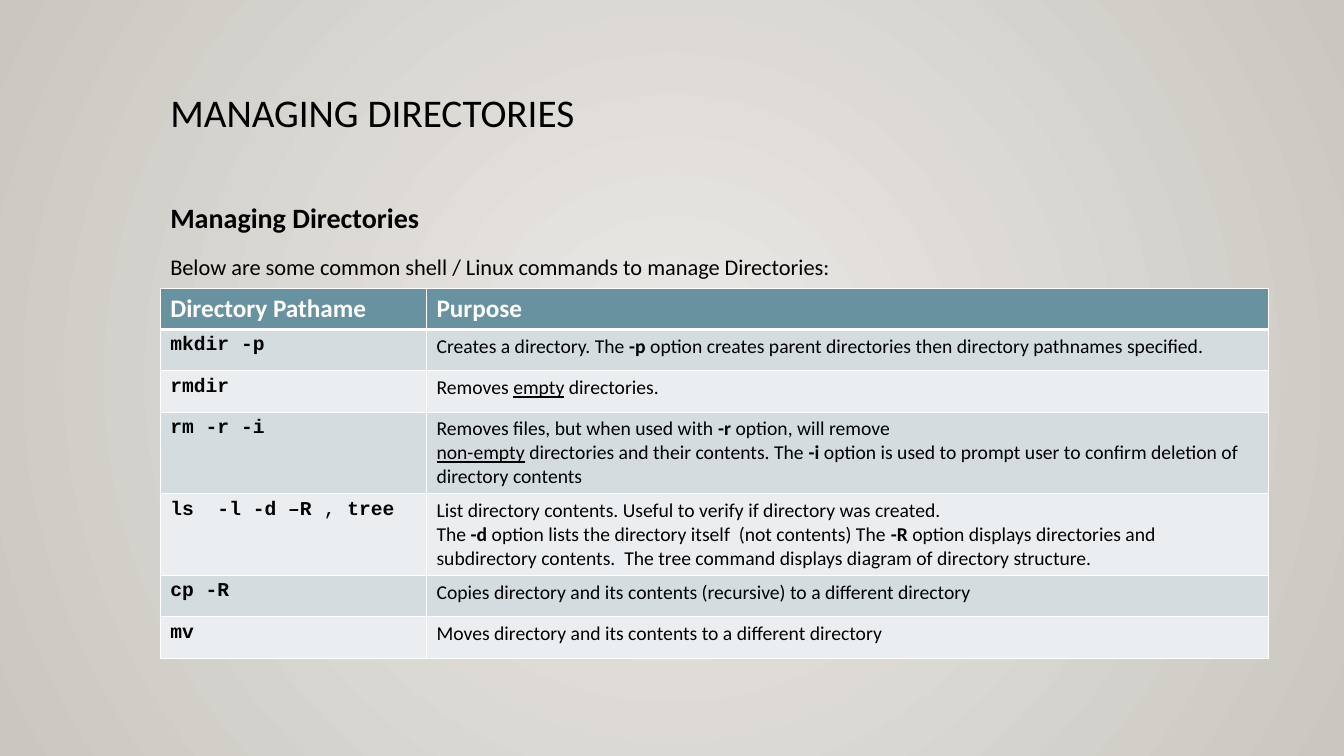
from lxml import etree
from pptx import Presentation
from pptx.dml.color import RGBColor
from pptx.enum.text import MSO_ANCHOR, MSO_AUTO_SIZE, PP_ALIGN
from pptx.oxml.ns import qn
from pptx.util import Inches, Pt

LEFT, TOP, NO_FIT = PP_ALIGN.LEFT, MSO_ANCHOR.TOP, MSO_AUTO_SIZE.NONE
TITLE_ONLY = 5
COLORS = {
    "text": "000000", "header_text": "FFFFFF", "border": "FFFFFF",
    "header": "6892A0", "odd_row": "D4DCDF", "even_row": "EBEEF0",
    "glow": "ECEAE7", "edge": "CAC7C1",
}
BODY_FONT, CODE_FONT = "Calibri", "Courier New"
PLAIN, BOLD, UNDERLINE = "plain", "bold", "underline"

HEADINGS = ["Directory Pathame", "Purpose"]
# Each row: height, command runs, then purpose lines made of runs
COMMANDS = [
    (0.41, [("mkdir -p", BOLD)],
     [[("Creates a directory. The ", PLAIN), ("-p", BOLD),
       (" option creates parent directories then directory pathnames specified.", PLAIN)]]),
    (0.41, [("rmdir", BOLD)],
     [[("Removes ", PLAIN), ("empty", UNDERLINE), (" directories.", PLAIN)]]),
    (0.81, [("rm -r -i", BOLD)],
     [[("Removes files, but when used with ", PLAIN), ("-r", BOLD),
       (" option, will remove ", PLAIN)],
      [("non-empty", UNDERLINE), (" directories and their contents. The ", PLAIN),
       ("-i", BOLD),
       (" option is used to prompt user to confirm deletion of directory contents", PLAIN)]]),
    (0.81, [("ls  -l -d –R ", BOLD), (", ", PLAIN), ("tree", BOLD)],
     [[("List directory contents. Useful to verify if directory was created. ", PLAIN)],
      [("The ", PLAIN), ("-d", BOLD),
       (" option lists the directory itself  (not contents) The ", PLAIN), ("-R", BOLD),
       (" option displays directories and subdirectory contents.  "
        "The tree command displays diagram of directory structure.", PLAIN)]]),
    (0.41, [("cp -R", BOLD)],
     [[("Copies directory and its contents (recursive) to a different directory", PLAIN)]]),
    (0.41, [("mv", BOLD)],
     [[("Moves directory and its contents to a different directory", PLAIN)]]),
]


def rgb(name):
    return RGBColor.from_string(COLORS[name])


def style_font(font, size, color="text", bold=False, name=BODY_FONT):
    font.name, font.size, font.bold = name, Pt(size), bold
    font.color.rgb = rgb(color)


def paint_background(slide):
    fill = slide.background.fill
    fill.gradient()
    for stop, color in zip(fill.gradient_stops, ("glow", "edge")):
        stop.color.rgb = rgb(color)
    # Turn the linear gradient into a circular one from the centre
    gradient = slide.element.find(".//" + qn("a:gradFill"))
    gradient.remove(gradient.find(qn("a:lin")))
    circle = etree.SubElement(gradient, qn("a:path"), path="circle")
    etree.SubElement(circle, qn("a:fillToRect"), l="50000", t="50000", r="50000", b="50000")


def place_title(slide, left, top, width, height):
    title = slide.shapes.title
    title.left, title.top = Inches(left), Inches(top)
    title.width, title.height = Inches(width), Inches(height)
    frame = title.text_frame
    frame.text = "MANAGING DIRECTORIES"
    frame.vertical_anchor, frame.auto_size = TOP, NO_FIT
    heading = frame.paragraphs[0]
    heading.alignment, heading.line_spacing = LEFT, 0.9
    style_font(heading.runs[0].font, 28)


def add_intro(slide, left, top, width, height):
    frame = slide.shapes.add_textbox(
        Inches(left), Inches(top), Inches(width), Inches(height)).text_frame
    frame.word_wrap = True
    frame.text = ("Managing Directories\n"
                  "Below are some common shell / Linux commands to manage Directories:")
    subtitle, lead = frame.paragraphs
    subtitle.line_spacing = lead.line_spacing = 1.2
    lead.space_before = Pt(10)
    style_font(subtitle.runs[0].font, 20, bold=True)
    style_font(lead.runs[0].font, 16)


def format_cell(cell, fill, top_width=1, bottom_width=1):
    properties = cell._tc.get_or_add_tcPr()
    for side, width in (("L", 1), ("R", 1), ("T", top_width), ("B", bottom_width)):
        line = etree.SubElement(properties, qn("a:ln" + side), w=str(Pt(width)))
        solid = etree.SubElement(line, qn("a:solidFill"))
        etree.SubElement(solid, qn("a:srgbClr"), val=COLORS["border"])
    cell.fill.solid()
    cell.fill.fore_color.rgb = rgb(fill)
    cell.vertical_anchor = TOP


def write_runs(cell, lines, font_name):
    paragraph = cell.text_frame.paragraphs[0]
    for index, line in enumerate(lines):
        if index:
            paragraph.add_line_break()
        for text, style in line:
            run = paragraph.add_run()
            run.text = text
            style_font(run.font, 14, bold=style == BOLD, name=font_name)
            run.font.underline = style == UNDERLINE


def add_command_table(slide, left, top, column_widths, header_height):
    height = header_height + sum(row[0] for row in COMMANDS)
    table = slide.shapes.add_table(
        len(COMMANDS) + 1, len(HEADINGS), Inches(left), Inches(top),
        Inches(sum(column_widths)), Inches(height)).table
    for column, width in zip(table.columns, column_widths):
        column.width = Inches(width)

    # Header row
    table.rows[0].height = Inches(header_height)
    for column, heading in enumerate(HEADINGS):
        cell = table.cell(0, column)
        cell.text = heading
        format_cell(cell, "header", bottom_width=3)
        style_font(cell.text_frame.paragraphs[0].runs[0].font, 18, "header_text", True)

    # Command rows
    for row, (row_height, command, purpose) in enumerate(COMMANDS, start=1):
        table.rows[row].height = Inches(row_height)
        for column in range(len(HEADINGS)):
            format_cell(table.cell(row, column), "odd_row" if row % 2 else "even_row",
                        top_width=3 if row == 1 else 1)
        write_runs(table.cell(row, 0), [command], CODE_FONT)
        write_runs(table.cell(row, 1), purpose, BODY_FONT)


def main():
    deck = Presentation()
    deck.slide_width, deck.slide_height = Inches(13.33), Inches(7.5)
    slide = deck.slides.add_slide(deck.slide_layouts[TITLE_ONLY])
    margin = 1.59
    paint_background(slide)
    place_title(slide, margin, 0.88, 10.5, 1.15)
    add_intro(slide, margin, 1.87, 9.18, 5.2)
    add_command_table(slide, margin, 2.86, (2.64, 8.35), 0.41)
    deck.save("out.pptx")


if __name__ == "__main__":
    main()
